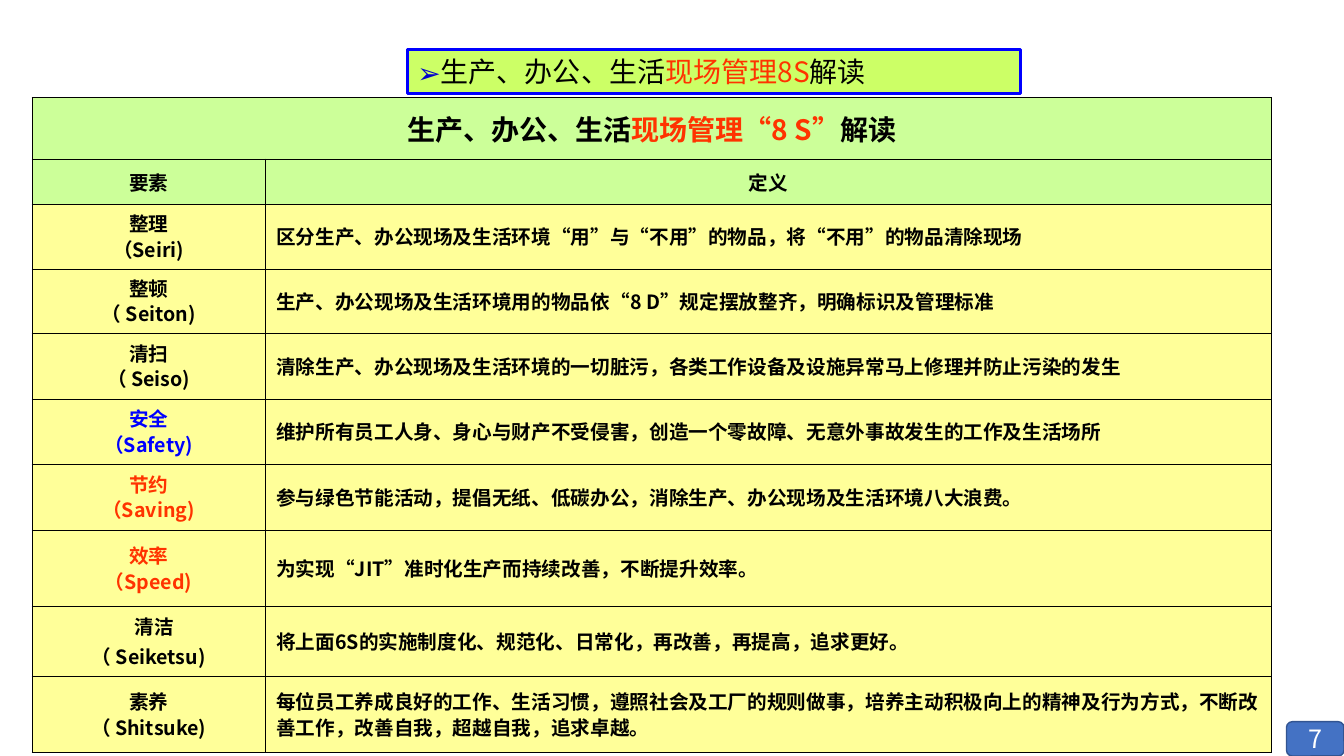
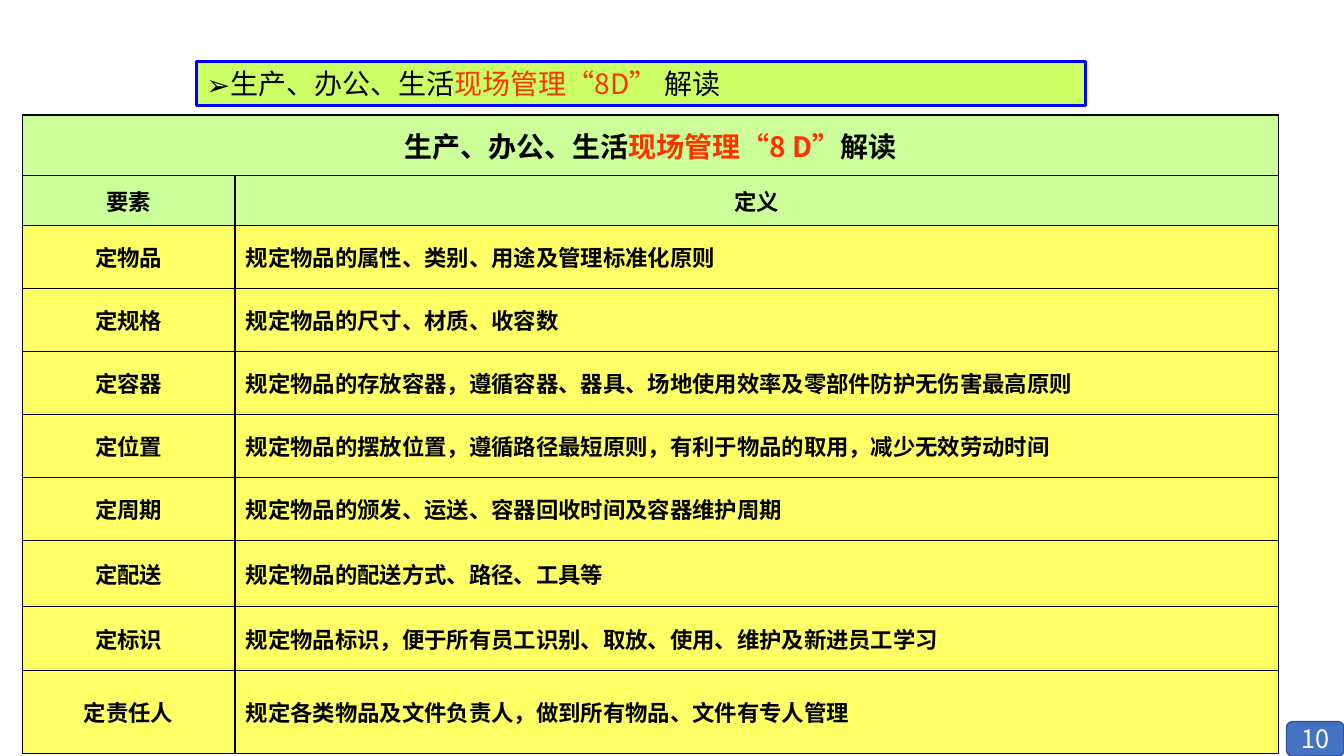
from dataclasses import dataclass

from lxml import etree
from pptx import Presentation
from pptx import util as u
from pptx.dml.color import RGBColor
from pptx.enum import shapes, text
from pptx.oxml import ns

PX = 9144  # EMU in one px, 100 px to the inch
FONT = "Noto Sans CJK SC"
BLACK = RGBColor(0x00, 0x00, 0x00)
WHITE = RGBColor(0xFF, 0xFF, 0xFF)
RED = RGBColor(0xFF, 0x33, 0x00)
BLUE = RGBColor(0x00, 0x00, 0xFF)
BULLET_BLUE = RGBColor(0x00, 0x00, 0xCC)
LIME = RGBColor(0xCC, 0xFF, 0x66)
HEADER_GREEN = RGBColor(0xCC, 0xFF, 0x99)
PALE_YELLOW = RGBColor(0xFF, 0xFF, 0x99)
YELLOW = RGBColor(0xFF, 0xFF, 0x66)
BADGE_BLUE = RGBColor(0x44, 0x72, 0xC4)
BADGE_EDGE = RGBColor(0x32, 0x54, 0x91)

CENTER = text.PP_ALIGN.CENTER
LEFT = text.PP_ALIGN.LEFT
SUBJECT = "生产、办公、生活"
MEANING = "解读"
CELL_MARGINS = (11, 5, 11, 5)
BADGE_BOX = (1276, 716, 57, 34)

Box = tuple[int, int, int, int]
Runs = list[tuple[str, RGBColor]]


@dataclass
class Element:
    names: list[str]
    definition: str
    height: int
    color: RGBColor = BLACK
    space: int = 0
    indent: int = 0


@dataclass
class Page:
    number: int
    banner_box: Box
    banner: Runs
    bullet_color: RGBColor
    table_origin: tuple[int, int]
    columns: tuple[int, int]
    heading: Runs
    header_heights: tuple[int, int]
    size: int
    line_spacing: float
    fill: RGBColor
    elements: list[Element]


def subject_runs(topic: str, ending: str = MEANING) -> Runs:
    return [(SUBJECT, BLACK), (topic, RED), (ending, BLACK)]


PAGES = [
    Page(
        7, (404, 49, 608, 44), subject_runs("现场管理8S"), BULLET_BLUE,
        (32, 97), (231, 998), subject_runs("现场管理“8 S”"), (61, 45),
        14, 0.9, PALE_YELLOW,
        [
            Element(["整理", "（Seiri)"], "区分生产、办公现场及生活环境“用”与“不用”的物品，将“不用”的物品清除现场", 64),
            Element(["整顿", "（ Seiton)"], "生产、办公现场及生活环境用的物品依“8 D”规定摆放整齐，明确标识及管理标准", 64),
            Element(["清扫", "（ Seiso)"],
                    "清除生产、办公现场及生活环境的一切脏污，各类工作设备及设施异常马上修理并防止污染的发生", 65),
            Element(["安全", "（Safety)"],
                    "维护所有员工人身、身心与财产不受侵害，创造一个零故障、无意外事故发生的工作及生活场所", 65, BLUE),
            Element(["节约", "（Saving)"],
                    "参与绿色节能活动，提倡无纸、低碳办公，消除生产、办公现场及生活环境八大浪费。", 65, RED),
            Element(["效率", "（Speed)"], "为实现“JIT”准时化生产而持续改善，不断提升效率。", 76, RED),
            Element(["清洁", "（ Seiketsu)"],
                    "将上面6S的实施制度化、规范化、日常化，再改善，再提高，追求更好。", 69, space=3, indent=11),
            Element(["素养", "（ Shitsuke)"],
                    "每位员工养成良好的工作、生活习惯，遵照社会及工厂的规则做事，培养主动积极向上的精神及"
                    "行为方式，不断改善工作，改善自我，超越自我，追求卓越。", 76),
        ],
    ),
    Page(
        10, (195, 61, 882, 44), subject_runs("现场管理“8D”", " " + MEANING), BLACK,
        (22, 114), (211, 1035), subject_runs("现场管理“8 D”"), (60, 50),
        16, 1.0, YELLOW,
        [
            Element(["定物品"], "规定物品的属性、类别、用途及管理标准化原则", 62),
            Element(["定规格"], "规定物品的尺寸、材质、收容数", 63),
            Element(["定容器"], "规定物品的存放容器，遵循容器、器具、场地使用效率及零部件防护无伤害最高原则", 62),
            Element(["定位置"], "规定物品的摆放位置，遵循路径最短原则，有利于物品的取用，减少无效劳动时间", 63),
            Element(["定周期"], "规定物品的颁发、运送、容器回收时间及容器维护周期", 62),
            Element(["定配送"], "规定物品的配送方式、路径、工具等", 66),
            Element(["定标识"], "规定物品标识，便于所有员工识别、取放、使用、维护及新进员工学习", 63),
            Element(["定责任人"], "规定各类物品及文件负责人，做到所有物品、文件有专人管理", 83),
        ],
    ),
]


def write(frame, paragraphs: list[Runs], *, size: int, bold: bool = False,
          align=LEFT, line_spacing: float = 1.0, space: int = 0) -> None:
    for index, runs in enumerate(paragraphs):
        paragraph = frame.add_paragraph() if index else frame.paragraphs[0]
        paragraph.alignment = align
        paragraph.line_spacing = line_spacing
        if index and space:
            paragraph.space_before = u.Pt(space)
        for content, color in runs:
            run = paragraph.add_run()
            run.text = content
            run.font.size = u.Pt(size)
            run.font.bold = bold
            run.font.color.rgb = color
            run.font.name = FONT
            etree.SubElement(run.font._element, ns.qn("a:ea"), typeface=FONT)


def add_bullet(paragraph, symbol: str, color: RGBColor) -> None:
    properties = paragraph._p.get_or_add_pPr()
    bullet_color = etree.SubElement(properties, ns.qn("a:buClr"))
    etree.SubElement(bullet_color, ns.qn("a:srgbClr"), val=str(color))
    etree.SubElement(properties, ns.qn("a:buFont"), typeface=FONT)
    etree.SubElement(properties, ns.qn("a:buChar"), char=symbol)


def add_box(slide, kind, box: Box, fill: RGBColor, line: RGBColor, width: int):
    shape = slide.shapes.add_shape(kind, *(u.Emu(value * PX) for value in box))
    shape.shadow.inherit = False
    shape.fill.solid()
    shape.fill.fore_color.rgb = fill
    shape.line.color.rgb = line
    shape.line.width = u.Pt(width)
    frame = shape.text_frame
    frame.word_wrap = True
    frame.auto_size = text.MSO_AUTO_SIZE.NONE
    frame.vertical_anchor = text.MSO_ANCHOR.MIDDLE
    return shape


def style_cell(cell, fill: RGBColor) -> None:
    """Give a cell its margins, thin black borders and fill."""
    cell.vertical_anchor = text.MSO_ANCHOR.MIDDLE
    cell.margin_left, cell.margin_top, cell.margin_right, cell.margin_bottom = (
        u.Emu(margin * PX) for margin in CELL_MARGINS)
    properties = cell._tc.get_or_add_tcPr()
    for side in ("lnL", "lnR", "lnT", "lnB"):
        border = etree.SubElement(properties, ns.qn(f"a:{side}"), w=str(u.Pt(1)))
        solid = etree.SubElement(border, ns.qn("a:solidFill"))
        etree.SubElement(solid, ns.qn("a:srgbClr"), val=str(BLACK))
    cell.fill.solid()
    cell.fill.fore_color.rgb = fill


def add_definition_table(slide, page: Page) -> None:
    heights = [*page.header_heights, *(element.height for element in page.elements)]
    box = (*page.table_origin, sum(page.columns), sum(heights))
    table = slide.shapes.add_table(
        len(heights), len(page.columns), *(u.Emu(value * PX) for value in box)).table
    table.first_row = table.horz_banding = False
    for column, width in zip(table.columns, page.columns):
        column.width = u.Emu(width * PX)
    for index, (row, height) in enumerate(zip(table.rows, heights)):
        row.height = u.Emu(height * PX)
        for cell in row.cells:
            style_cell(cell, HEADER_GREEN if index < 2 else page.fill)

    table.cell(0, 0).merge(table.cell(0, 1))
    write(table.cell(0, 0).text_frame, [page.heading], size=20, bold=True, align=CENTER)
    for column, label in enumerate(("要素", "定义")):
        write(table.cell(1, column).text_frame, [[(label, BLACK)]],
              size=page.size, bold=True, align=CENTER)
    for index, element in enumerate(page.elements, start=2):
        name_frame = table.cell(index, 0).text_frame
        write(name_frame, [[(name, element.color)] for name in element.names],
              size=page.size, bold=True, align=CENTER,
              line_spacing=page.line_spacing, space=element.space)
        if element.indent:
            name_frame.paragraphs[0]._p.get_or_add_pPr().set("marL", str(element.indent * PX))
        write(table.cell(index, 1).text_frame, [[(element.definition, BLACK)]],
              size=page.size, bold=True, line_spacing=page.line_spacing)


def add_page(presentation, page: Page) -> None:
    slide = presentation.slides.add_slide(presentation.slide_layouts[6])
    add_definition_table(slide, page)
    banner = add_box(slide, shapes.MSO_SHAPE.RECTANGLE, page.banner_box, LIME, BLUE, 2)
    add_bullet(banner.text_frame.paragraphs[0], "➢", page.bullet_color)
    write(banner.text_frame, [page.banner], size=20)
    badge = add_box(slide, shapes.MSO_SHAPE.ROUNDED_RECTANGLE, BADGE_BOX,
                    BADGE_BLUE, BADGE_EDGE, 1)
    write(badge.text_frame, [[(str(page.number), WHITE)]], size=18, align=CENTER)


def main() -> None:
    presentation = Presentation()
    presentation.slide_width = u.Emu(1333 * PX)
    presentation.slide_height = u.Emu(750 * PX)
    for page in PAGES:
        add_page(presentation, page)
    presentation.save("out.pptx")


if __name__ == "__main__":
    main()
